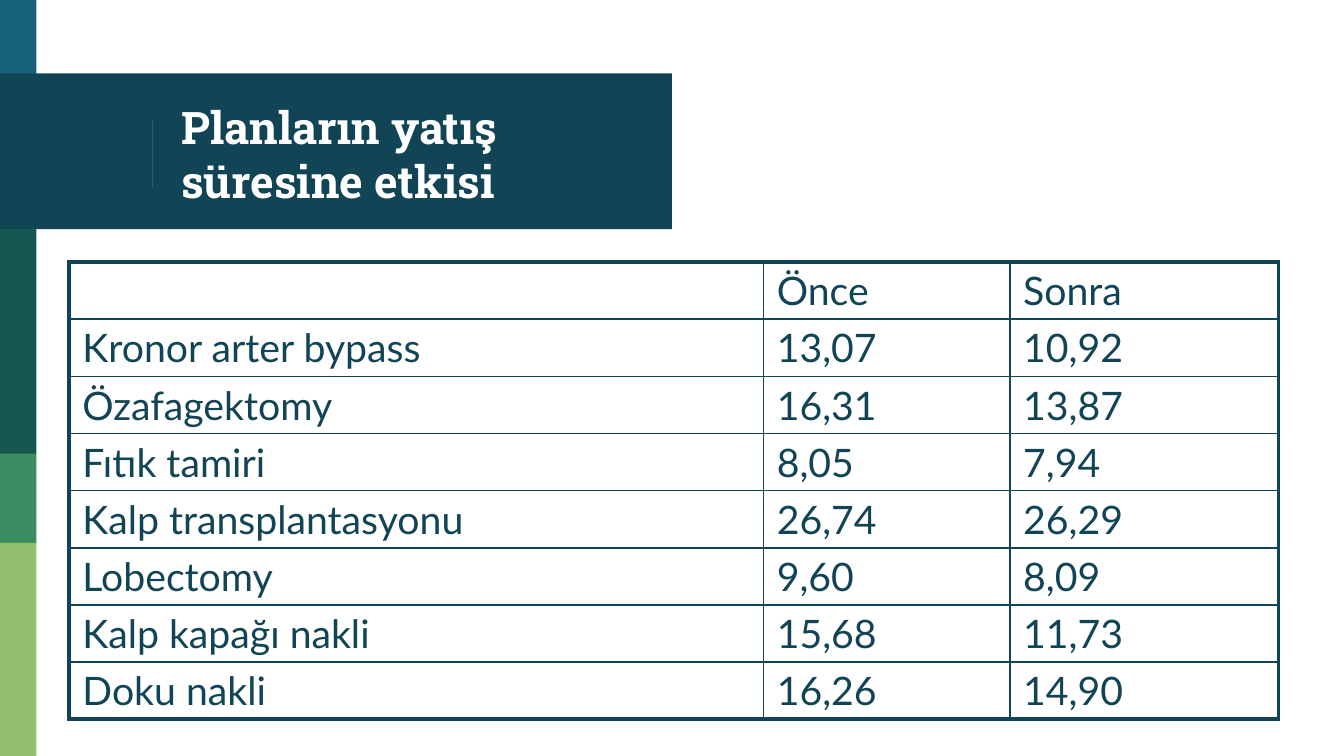
from lxml.etree import SubElement
from pptx import Presentation
from pptx.dml.color import RGBColor
from pptx.enum.shapes import MSO_CONNECTOR as Connector, MSO_SHAPE as Shape
from pptx.enum.text import MSO_ANCHOR as Anchor
from pptx.oxml.ns import qn
from pptx.util import Pt

COLORS = {
    "blue": "18637B",
    "navy": "114454",
    "pine": "165751",
    "green": "3B8D61",
    "lime": "94BF6E",
    "white": "FFFFFF",
}


def write_text(frame, text, font, size, color, bold=False, margins=(7.2, 7.2)):
    frame.word_wrap = True
    frame.margin_left = frame.margin_right = Pt(margins[0])
    frame.margin_top = frame.margin_bottom = Pt(margins[1])
    run = frame.paragraphs[0].add_run()
    run.text = text
    run.font.name = font
    run.font.size = Pt(size)
    run.font.bold = bold
    run.font.color.rgb = RGBColor.from_string(COLORS[color])


def add_border(cell, side, width):
    line = SubElement(cell._tc.get_or_add_tcPr(), qn(f"a:ln{side}"), w=str(Pt(width)))
    fill = SubElement(line, qn("a:solidFill"))
    SubElement(fill, qn("a:srgbClr"), val=COLORS["navy"])


presentation = Presentation()
presentation.slide_width = Pt(720)
presentation.slide_height = Pt(405)
slide = presentation.slides.add_slide(presentation.slide_layouts[6])

bands = [
    (0, 19.5, 42, "blue"),
    (39.4, 360, 83.4, "navy"),
    (122.7, 19.5, 120.7, "pine"),
    (243.1, 19.5, 47.8, "green"),
    (290.9, 19.5, 114.1, "lime"),
]
for top, width, height, color in bands:
    band = slide.shapes.add_shape(Shape.RECTANGLE, 0, Pt(top), Pt(width), Pt(height))
    band.shadow.inherit = False
    band.fill.solid()
    band.fill.fore_color.rgb = RGBColor.from_string(COLORS[color])
    band.line.fill.background()

divider = slide.shapes.add_connector(Connector.STRAIGHT, Pt(81.6), Pt(64), Pt(81.6), Pt(100.8))
divider.line.color.rgb = RGBColor.from_string(COLORS["blue"])
divider.line.width = Pt(0.75)
SubElement(divider._element.spPr, qn("a:effectLst"))

title = slide.shapes.add_textbox(Pt(90), Pt(42), Pt(252.7), Pt(80.6))
title.text_frame.vertical_anchor = Anchor.MIDDLE
write_text(title.text_frame, "Planların yatış süresine etkisi",
           font="Roboto Slab", size=24, color="white", bold=True)

rows = [
    ("", "Önce", "Sonra"),
    ("Kronor arter bypass", "13,07", "10,92"),
    ("Özafagektomy", "16,31", "13,87"),
    ("Fıtık tamiri", "8,05", "7,94"),
    ("Kalp transplantasyonu", "26,74", "26,29"),
    ("Lobectomy", "9,60", "8,09"),
    ("Kalp kapağı nakli", "15,68", "11,73"),
    ("Doku nakli", "16,26", "14,90"),
]
column_widths = [372, 132, 144]
row_height = 30.6
last_row, last_column = len(rows) - 1, len(column_widths) - 1

table = slide.shapes.add_table(
    len(rows), len(column_widths), Pt(37), Pt(140.4),
    Pt(sum(column_widths)), Pt(row_height * len(rows))).table
table.first_row = table.horz_banding = False
for column, width in zip(table.columns, column_widths):
    column.width = Pt(width)

for row_index, row in enumerate(rows):
    table.rows[row_index].height = Pt(row_height)
    for column_index, text in enumerate(row):
        cell = table.cell(row_index, column_index)
        cell.margin_left = cell.margin_right = Pt(7.2)
        cell.margin_top = cell.margin_bottom = Pt(2.7)
        if text:
            write_text(cell.text_frame, text, font="Lato", size=21, color="navy",
                       margins=(7.2, 2.7))
        outer_sides = {
            "L": column_index == 0,
            "R": column_index == last_column,
            "T": row_index == 0,
            "B": row_index == last_row,
        }
        for side, is_outer in outer_sides.items():
            add_border(cell, side, 2.25 if is_outer else 1)
        cell.fill.background()

presentation.save("out.pptx")
